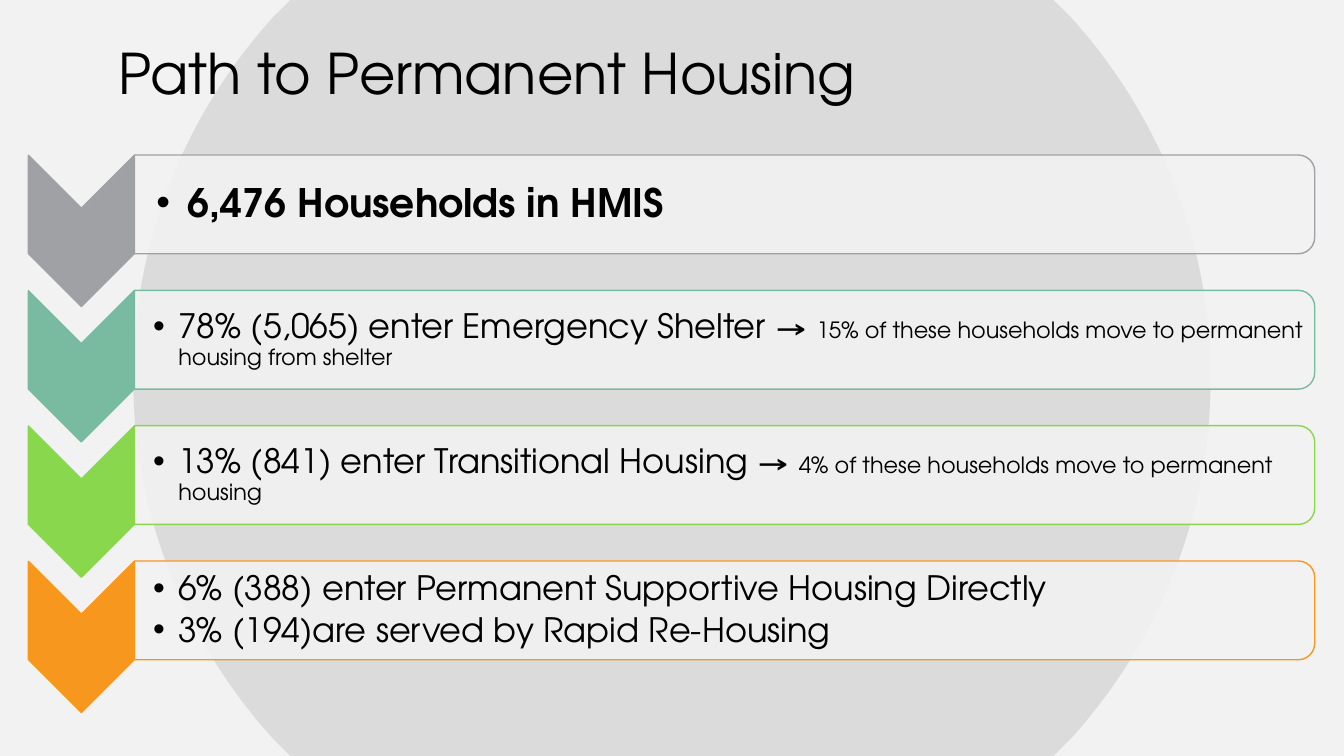
import pptx
import pptx.dml.color
import pptx.enum.shapes
import pptx.enum.text
import pptx.oxml.ns
import pptx.util
from lxml import etree

Pt = pptx.util.Pt
qn = pptx.oxml.ns.qn
Shapes = pptx.enum.shapes.MSO_SHAPE
Anchor = pptx.enum.text.MSO_ANCHOR

FONT = "TeX Gyre Adventor"
TITLE = "Path to Permanent Housing"
HEADLINE = {"size": 28, "bold": True}
MAIN = {"size": 24, "bold": False}
DETAIL = {"size": 16, "bold": False}

# Each step: colour, text indent, left inset, paragraphs of (text, format) spans
STEPS = [
    ("9FA1A4", 22.5, 16, [[("6,476 Households in HMIS", HEADLINE)]]),
    ("78BBA0", 18, 13.6, [[
        ("78% (5,065) enter Emergency Shelter → ", MAIN),
        ("15% of these households move to permanent housing from shelter", DETAIL)]]),
    ("88D74D", 18, 13.6, [[
        ("13% (841) enter Transitional Housing → ", MAIN),
        ("4% of these households move to permanent housing", DETAIL)]]),
    ("F8971D", 18, 13.6, [
        [("6% (388) enter Permanent Supportive Housing Directly", MAIN)],
        [("3% (194)are served by Rapid Re-Housing", MAIN)]]),
]

PAGE_WIDTH, PAGE_HEIGHT = 960, 540
# Upper right quarter of the circle, x from the page centre: two corners, two curve handles
CIRCLE_QUARTER = [(272.5, 0), (284.8, 12.2), (346.7, 80.6), (384.8, 170.6)]
CIRCLE_SIDE = (384.8, 270)
CURVE_STARTS = (1, 4, 10, 13)
STEP_PITCH = 96.66
CHEVRON_CENTRE, CHEVRON_SIZE = (58.1, 165), (108, 75.6)
BAR_CENTRE, BAR_SIZE = (517.6, 146), (70.56, 843)
TEXT_LEFT, TEXT_WIDTH, TEXT_HEIGHT = 95.8, 839.5, 63.4


def paint(fill, color, opacity=100):
    fill.solid()
    fill.fore_color.rgb = pptx.dml.color.RGBColor.from_string(color)
    if opacity < 100:
        tint = fill._xPr.find(".//" + qn("a:srgbClr"))
        etree.SubElement(tint, qn("a:alpha"), val=str(opacity * 1000))


def style(target, formats):
    for name, value in formats.items():
        setattr(target, name, value)


def write(para, text, size, bold=False):
    span = para.add_run()
    span.text = text
    style(span.font, {"name": FONT, "size": Pt(size), "bold": bold})
    paint(span.font.fill, "000000")


def add_turned(page, kind, centre, size, fill, line, opacity=100):
    """Add a preset shape turned a quarter clockwise about its centre."""
    (x, y), (width, height) = centre, size
    shape = page.shapes.add_shape(kind, Pt(x - width / 2), Pt(y - height / 2),
                                  Pt(width), Pt(height))
    shape.rotation = 90
    shape.shadow.inherit = False
    paint(shape.fill, fill, opacity)
    paint(shape.line.fill, line)
    shape.line.width = Pt(1)


def add_bullet(para, indent):
    style(para, {"level": 1, "line_spacing": 0.9, "space_after": Pt(4)})
    properties = para._p.get_or_add_pPr()
    properties.set("marL", str(Pt(indent)))
    properties.set("indent", str(-Pt(indent)))
    etree.SubElement(properties, qn("a:buFont"), typeface="Arial")
    etree.SubElement(properties, qn("a:buChar"), char="•")


def bend(shape, starts):
    """Join three line segments at each start into one Bézier curve."""
    segments = list(shape.element.iter(qn("a:lnTo")))
    for start in starts:
        curve = etree.Element(qn("a:cubicBezTo"))
        segments[start].addprevious(curve)
        for segment in segments[start:start + 3]:
            curve.append(segment[0])
            segment.getparent().remove(segment)


def add_circle(page):
    """Add the backdrop circle, cut off at the top and bottom of the page."""
    right = CIRCLE_QUARTER + [CIRCLE_SIDE]
    right += [(x, PAGE_HEIGHT - y) for x, y in reversed(CIRCLE_QUARTER)]
    outline = right + [(-x, y) for x, y in reversed(right)]
    points = [(10 * (PAGE_WIDTH / 2 + x), 10 * y) for x, y in outline]
    builder = page.shapes.build_freeform(*points[0], scale=Pt(1) / 10)
    builder.add_line_segments(points[1:], close=True)
    circle = builder.convert_to_shape()
    bend(circle, CURVE_STARTS)
    circle.shadow.inherit = False
    paint(circle.fill, "CECECE", 62)
    circle.line.fill.background()
    circle.element.getparent().insert(2, circle.element)  # behind the title


def add_title(page):
    title = page.shapes.title
    style(title, {"left": Pt(77.2), "top": Pt(24), "width": Pt(749.5), "height": Pt(55.4)})
    style(title.text_frame, {"vertical_anchor": Anchor.TOP, "word_wrap": True})
    para = title.text_frame.paragraphs[0]
    para.alignment = pptx.enum.text.PP_ALIGN.LEFT
    write(para, TITLE, 40)


def add_step(page, index, color, indent, inset, paragraphs):
    drop = index * STEP_PITCH
    bar_y = BAR_CENTRE[1] + drop
    add_turned(page, Shapes.CHEVRON, (CHEVRON_CENTRE[0], CHEVRON_CENTRE[1] + drop),
               CHEVRON_SIZE, color, color)
    add_turned(page, Shapes.ROUND_2_SAME_RECTANGLE, (BAR_CENTRE[0], bar_y),
               BAR_SIZE, "F2F2F2", color, 90)
    box = page.shapes.add_textbox(Pt(TEXT_LEFT), Pt(bar_y - TEXT_HEIGHT / 2),
                                  Pt(TEXT_WIDTH), Pt(TEXT_HEIGHT))
    frame = box.text_frame
    style(frame, {"word_wrap": True, "vertical_anchor": Anchor.MIDDLE,
                  "margin_left": Pt(inset), "margin_right": Pt(1.4),
                  "margin_top": Pt(1.4), "margin_bottom": Pt(1.4)})
    for number, spans in enumerate(paragraphs):
        para = frame.add_paragraph() if number else frame.paragraphs[0]
        add_bullet(para, indent)
        for text, formats in spans:
            write(para, text, **formats)


def main():
    deck = pptx.Presentation()
    style(deck, {"slide_width": Pt(PAGE_WIDTH), "slide_height": Pt(PAGE_HEIGHT)})
    page = deck.slides.add_slide(deck.slide_layouts.get_by_name("Title Only"))
    paint(page.background.fill, "F2F2F2")
    add_circle(page)
    add_title(page)
    for index, step in enumerate(STEPS):
        add_step(page, index, *step)
    deck.save("out.pptx")


if __name__ == "__main__":
    main()
